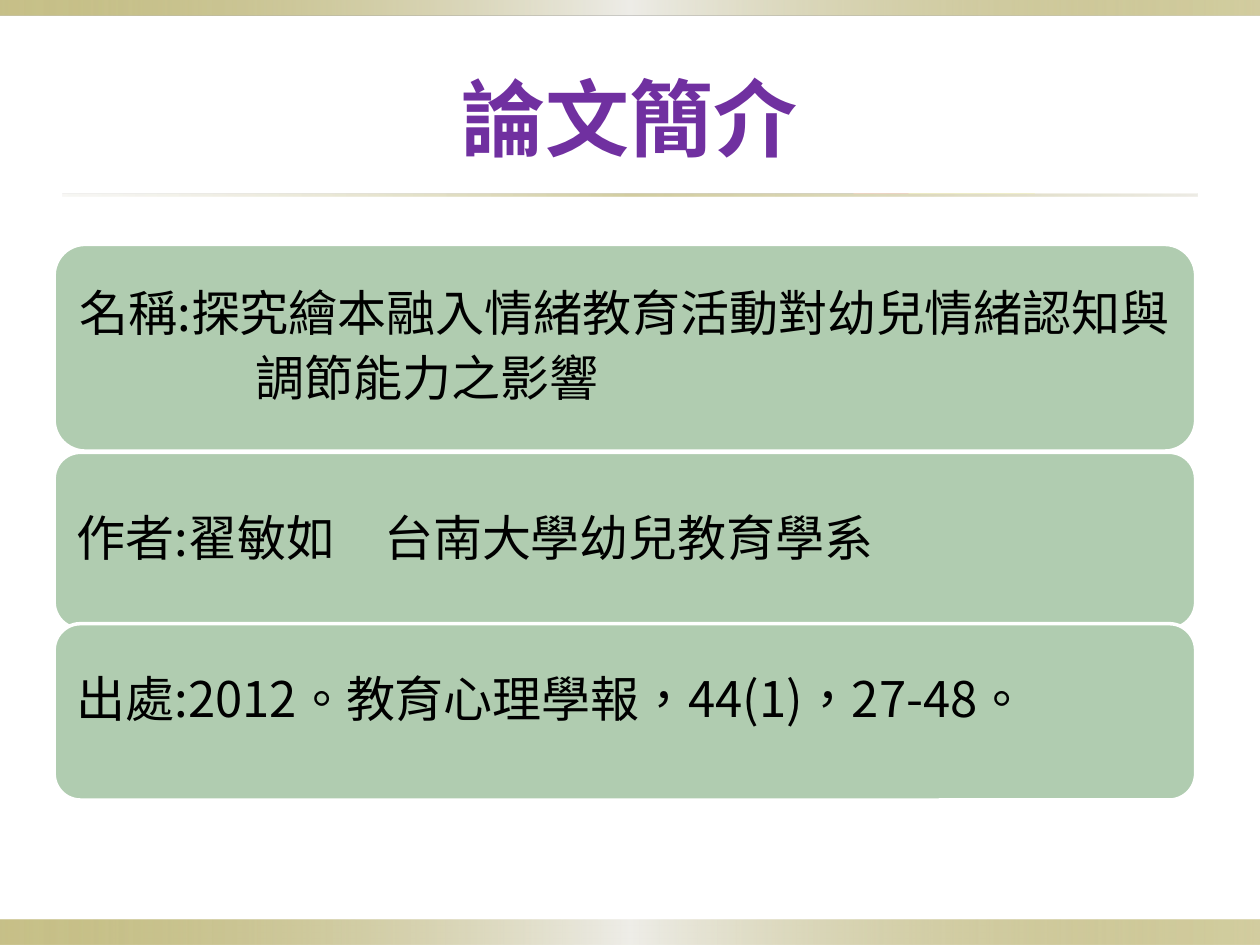
from lxml.etree import SubElement
from pptx import Presentation
from pptx.dml.color import RGBColor
from pptx.enum.shapes import MSO_SHAPE
from pptx.enum.text import MSO_ANCHOR, PP_ALIGN
from pptx.oxml.ns import qn
from pptx.util import Inches, Pt

THEME = {
    "font": "Noto Sans CJK SC",
    "stop_font": "Noto Sans CJK TC",
    "title_size": 48,
    "body_size": 28,
    "title": "7030A0",
    "text": "000000",
    "card": "B0CCB0",
    "border": "FFFFFF",
}

# Content
TITLE = "論文簡介"
# Each card: top, height, inset, extra bottom inset, paragraphs of (indent, runs)
CARDS = [
    (1.94, 1.64, 0.13, 0, [
        (0, [("名稱:探究繪本融入情緒教育活動對幼兒情緒認知與", "font")]),
        (1.4, [("調節能力之影響", "font")]),
    ]),
    (3.59, 1.4, 0.12, 0, [
        (0, [("作者:翟敏如　台南大學幼兒教育學系", "font")]),
    ]),
    (4.95, 1.4, 0.12, 0.16, [
        (0, [("出處:2012。教育心理學報，44(1)，27-48", "font"), ("。", "stop_font")]),
    ]),
]
CARD_LEFT, CARD_WIDTH = 0.43, 9.06

# Gradient stops: position %, colour, opacity %
BAND = [(0, "918415", 50), (50, "EEEDE8", 100), (100, "918415", 40)]
RULE = [(0, "DCD9CC", 20), (50, "918415", 40), (100, "DCD9CC", 50)]
BARS = [
    ((0, 7.3, 10, 0.2), BAND),
    ((0, 0, 10, 0.12), BAND),
    ((0.5, 1.54, 9, 0.02), RULE),
]


def format_run(run, font, size, color, bold=False):
    run.font.name = font
    run.font.size = Pt(size)
    run.font.bold = bold
    run.font.color.rgb = RGBColor.from_string(color)
    properties = run.font._element
    properties.set("lang", "zh-TW")
    SubElement(properties, qn("a:ea")).set("typeface", font)


def add_bar(slide, box, stops):
    bar = slide.shapes.add_shape(MSO_SHAPE.RECTANGLE, *map(Inches, box))
    bar.shadow.inherit = False
    bar.line.fill.background()
    bar.fill.gradient()
    bar.fill.gradient_angle = 0
    stop_list = bar._element.spPr.find(qn("a:gradFill")).find(qn("a:gsLst"))
    for old_stop in list(stop_list):
        stop_list.remove(old_stop)
    for position, color, opacity in stops:
        stop = SubElement(stop_list, qn("a:gs"), pos=str(position * 1000))
        fill = SubElement(stop, qn("a:srgbClr"), val=color)
        SubElement(fill, qn("a:alpha"), val=str(opacity * 1000))


def add_card(slide, top, height, inset, extra_bottom, paragraphs):
    card = slide.shapes.add_shape(
        MSO_SHAPE.ROUNDED_RECTANGLE,
        Inches(CARD_LEFT), Inches(top), Inches(CARD_WIDTH), Inches(height))
    card.adjustments[0] = 0.15
    card.shadow.inherit = False
    card.fill.solid()
    card.fill.fore_color.rgb = RGBColor.from_string(THEME["card"])
    card.line.color.rgb = RGBColor.from_string(THEME["border"])
    card.line.width = Pt(2)

    frame = card.text_frame
    frame.word_wrap = True
    frame.vertical_anchor = MSO_ANCHOR.MIDDLE
    frame.margin_left = frame.margin_right = frame.margin_top = Inches(inset)
    frame.margin_bottom = Inches(inset + extra_bottom)
    for index, (indent, runs) in enumerate(paragraphs):
        paragraph = frame.add_paragraph() if index else frame.paragraphs[0]
        paragraph.alignment = PP_ALIGN.LEFT
        paragraph.line_spacing = 0.9
        paragraph.space_after = Pt(7)
        paragraph._p.get_or_add_pPr().set("marL", str(Inches(indent)))
        for text, font in runs:
            run = paragraph.add_run()
            run.text = text
            format_run(run, THEME[font], THEME["body_size"], THEME["text"])


def main():
    presentation = Presentation()
    presentation.slide_width, presentation.slide_height = Inches(10), Inches(7.5)
    slide = presentation.slides.add_slide(presentation.slide_layouts[5])

    # Bands and rule
    for box, stops in BARS:
        add_bar(slide, box, stops)

    # Title
    title = slide.shapes.title
    title.left, title.top, title.width, title.height = map(Inches, (0.5, 0.3, 9, 1.25))
    title.text_frame.text = TITLE
    title.text_frame.vertical_anchor = MSO_ANCHOR.MIDDLE
    paragraph = title.text_frame.paragraphs[0]
    paragraph.alignment = PP_ALIGN.CENTER
    format_run(paragraph.runs[0], THEME["font"], THEME["title_size"], THEME["title"], True)

    # Cards
    for card in CARDS:
        add_card(slide, *card)

    presentation.save("out.pptx")


if __name__ == "__main__":
    main()
